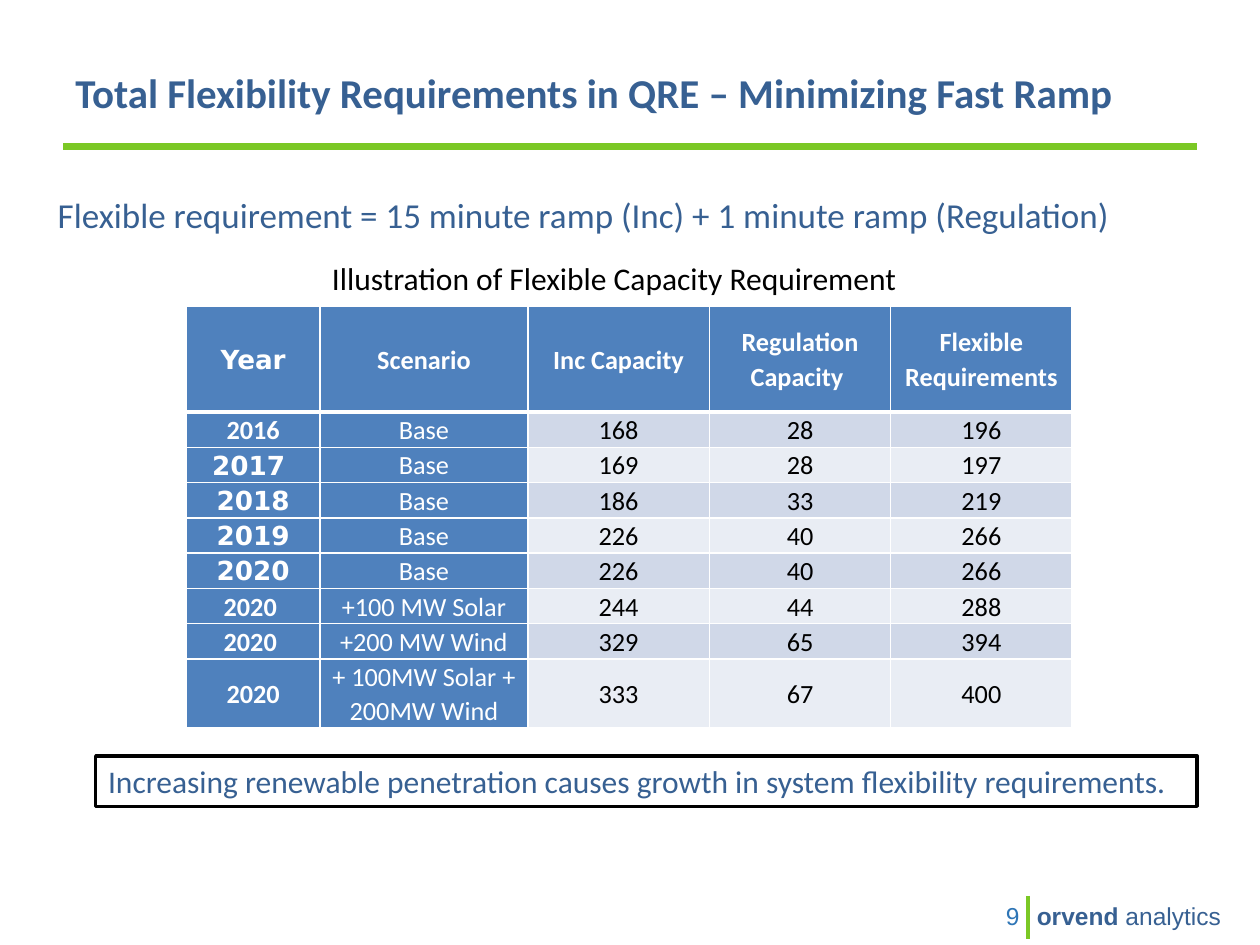
from lxml.etree import SubElement
from pptx import Presentation
from pptx.dml.color import RGBColor
from pptx.enum.shapes import MSO_CONNECTOR, MSO_SHAPE
from pptx.enum.text import MSO_ANCHOR, PP_ALIGN
from pptx.oxml.ns import qn
from pptx.util import Inches, Pt

NAVY = RGBColor(0x37, 0x60, 0x92)
NUMBER_BLUE = RGBColor(0x2E, 0x75, 0xB6)
GREEN = RGBColor(0x7B, 0xC8, 0x25)
HEADER_BLUE = RGBColor(0x4F, 0x81, 0xBD)
BANDS = RGBColor(0xD0, 0xD8, 0xE8), RGBColor(0xE9, 0xED, 0xF4)
WHITE = RGBColor(0xFF, 0xFF, 0xFF)
BLACK = RGBColor(0, 0, 0)

TITLE = "Total Flexibility Requirements in QRE – Minimizing Fast Ramp"
FORMULA = "Flexible requirement = 15 minute ramp (Inc) + 1 minute ramp (Regulation)"
CAPTION = "Illustration of Flexible Capacity Requirement"
TAKEAWAY = "Increasing renewable penetration causes growth in system flexibility requirements."
PAGE_NUMBER = "9"
COMPANY = [("orvend", True), (" analytics", False)]

REQUIREMENTS = [
    ("Year", "Scenario", "Inc Capacity", "Regulation Capacity ", "Flexible Requirements"),
    ("2016", "Base", "168", "28", "196"),
    ("2017 ", "Base", "169", "28", "197"),
    ("2018", "Base", "186", "33", "219"),
    ("2019", "Base", "226", "40", "266"),
    ("2020", "Base", "226", "40", "266"),
    ("2020 ", "+100 MW Solar", "244", "44", "288"),
    ("2020 ", "+200 MW Wind", "329", "65", "394"),
    ("2020", "+ 100MW Solar + 200MW Wind", "333", "67", "400"),
]
WIDE_YEAR_ROWS = {0, 2, 3, 4, 5}
COLUMN_WIDTHS = [1.06, 1.65] + [1.44] * 3
ROW_HEIGHTS = [0.84] + [0.28] * 7 + [0.55]


def write(frame, text, size, color, font="Calibri", bold=False,
          align=PP_ALIGN.LEFT, anchor=MSO_ANCHOR.TOP, spacing=None):
    frame.word_wrap = True
    frame.vertical_anchor = anchor
    paragraph = frame.paragraphs[0]
    paragraph.alignment = align
    if spacing:
        paragraph.line_spacing = spacing
    runs = [(text, bold)] if isinstance(text, str) else text
    for words, heavy in runs:
        run = paragraph.add_run()
        run.text = words
        run.font.size = Pt(size)
        run.font.name = font
        run.font.bold = heavy
        run.font.color.rgb = color


def add_text(slide, box, text, size, color, **style):
    frame = slide.shapes.add_textbox(*map(Inches, box)).text_frame
    write(frame, text, size, color, **style)


def add_rule(slide, start, end, width):
    rule = slide.shapes.add_connector(
        MSO_CONNECTOR.STRAIGHT, *map(Inches, start + end))
    rule.line.color.rgb = GREEN
    rule.line.width = Pt(width)
    SubElement(rule._element.spPr, qn("a:effectLst"))


def set_borders(cell, **widths):
    properties = cell._tc.get_or_add_tcPr()
    for side in "LRTB":
        line = SubElement(properties, qn(f"a:ln{side}"), w=str(Pt(widths.get(side, 1))))
        fill = SubElement(line, qn("a:solidFill"))
        SubElement(fill, qn("a:srgbClr"), val=str(WHITE))


def add_requirements(slide, left, top):
    table = slide.shapes.add_table(
        len(ROW_HEIGHTS), len(COLUMN_WIDTHS), Inches(left), Inches(top),
        Inches(sum(COLUMN_WIDTHS)), Inches(sum(ROW_HEIGHTS))).table
    table.horz_banding = False
    for column, width in zip(table.columns, COLUMN_WIDTHS):
        column.width = Inches(width)
    for row, height in zip(table.rows, ROW_HEIGHTS):
        row.height = Inches(height)

    for r, values in enumerate(REQUIREMENTS):
        for c, value in enumerate(values):
            cell = table.cell(r, c)
            labelled = r == 0 or c < 2
            set_borders(cell, B=3 if r == 0 else 1, T=3 if r == 1 else 1)
            cell.fill.solid()
            cell.fill.fore_color.rgb = HEADER_BLUE if labelled else BANDS[(r - 1) % 2]
            cell.margin_left = cell.margin_right = Inches(0.06)
            cell.margin_top = cell.margin_bottom = 0
            cell.vertical_anchor = MSO_ANCHOR.MIDDLE
            write(cell.text_frame, value, 15, WHITE if labelled else BLACK,
                  font="DejaVu Sans" if c == 0 and r in WIDE_YEAR_ROWS else "Calibri",
                  bold=r == 0 or c == 0, align=PP_ALIGN.CENTER,
                  anchor=MSO_ANCHOR.MIDDLE, spacing=1.07)


def add_takeaway(slide, box):
    frame = slide.shapes.add_shape(MSO_SHAPE.RECTANGLE, *map(Inches, box))
    frame.shadow.inherit = False
    frame.fill.background()
    frame.line.color.rgb = BLACK
    frame.line.width = Pt(2)
    write(frame.text_frame, TAKEAWAY, 18, NAVY)


def main():
    deck = Presentation()
    deck.slide_width, deck.slide_height = Inches(10), Inches(7.5)
    slide = deck.slides.add_slide(deck.slide_layouts[6])

    middle = {"anchor": MSO_ANCHOR.MIDDLE}
    add_text(slide, (7.48, 7.07, 0.71, 0.4), PAGE_NUMBER, 14, NUMBER_BLUE,
             font="Arial", align=PP_ALIGN.RIGHT, **middle)
    add_text(slide, (8.13, 7.07, 1.75, 0.4), COMPANY, 14, NAVY, font="Arial", **middle)
    add_rule(slide, (8.16, 7.11), (8.16, 7.45), 2)
    add_rule(slide, (0.5, 1.16), (9.5, 1.16), 4)
    add_text(slide, (0.5, 0.3, 9, 0.86), TITLE, 23.4, NAVY, bold=True, **middle)
    add_requirements(slide, 1.48, 2.43)
    add_takeaway(slide, (0.76, 6, 8.74, 0.4))
    add_text(slide, (0.36, 1.49, 9.28, 0.44), FORMULA, 20, NAVY)
    add_text(slide, (0.44, 2.01, 8.87, 0.4), CAPTION, 18, BLACK, align=PP_ALIGN.CENTER)
    deck.save("out.pptx")


if __name__ == "__main__":
    main()
